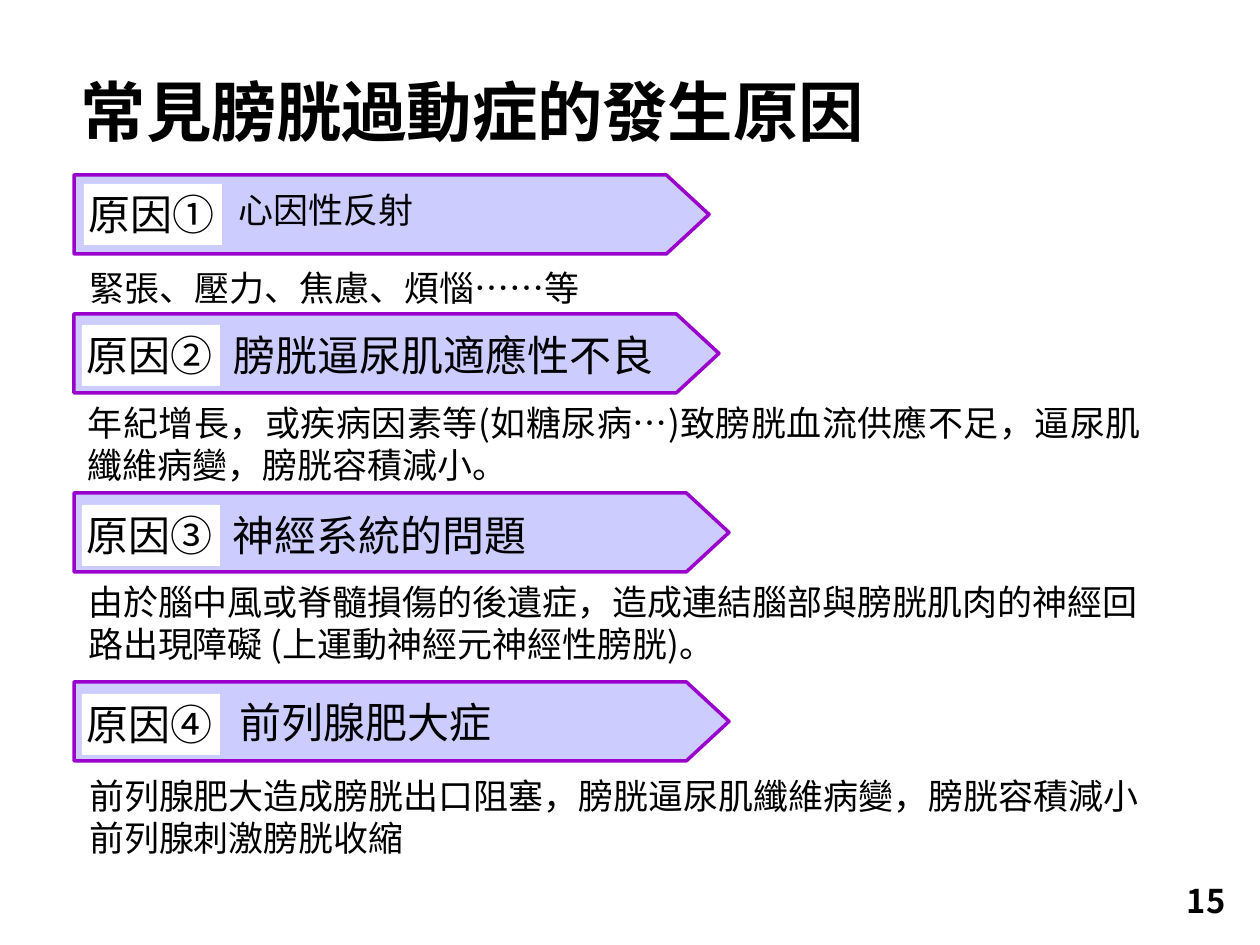
from lxml.etree import SubElement
from pptx import Presentation
from pptx.dml.color import RGBColor
from pptx.enum.shapes import MSO_SHAPE as Shape
from pptx.enum.text import MSO_ANCHOR as Anchor, MSO_AUTO_SIZE as AutoSize, PP_ALIGN as Align
from pptx.oxml.ns import qn
from pptx.util import Emu, Pt

PX = 914400 / 168
COLORS = {"text": "000000", "banner": "CCCCFF", "border": "9900CC", "label": "FFFFFF"}


def px(length):
    return Emu(round(length * PX))


def color(name):
    return RGBColor.from_string(COLORS[name])


class Deck:
    font = "Noto Sans CJK SC"
    inset = 5

    def __init__(self, width, height):
        self.prs = Presentation()
        self.prs.slide_width, self.prs.slide_height = px(width), px(height)
        self.slide = self.prs.slides.add_slide(self.prs.slide_layouts[5])

    def set_text(self, frame, lines, size, bold=False, align=Align.LEFT):
        frame.text = "\n".join(lines)
        for paragraph in frame.paragraphs:
            paragraph.alignment = align
            font = paragraph.font
            font.name, font.size, font.bold = self.font, Pt(size), bold
            font.color.rgb = color("text")
            properties = paragraph._p.pPr.find(qn("a:defRPr"))
            SubElement(properties, qn("a:ea")).set("typeface", self.font)

    def fit(self, frame, wrap):
        frame.margin_left = frame.margin_right = px(self.inset)
        frame.margin_top = frame.margin_bottom = px(self.inset)
        frame.vertical_anchor = Anchor.TOP
        frame.word_wrap = wrap
        frame.auto_size = AutoSize.SHAPE_TO_FIT_TEXT

    def title(self, box, text):
        title = self.slide.shapes.title
        title.left, title.top, title.width, title.height = map(px, box)
        frame = title.text_frame
        frame.vertical_anchor = Anchor.MIDDLE
        frame.auto_size = AutoSize.NONE
        self.set_text(frame, [text], 28, bold=True)

    def shape(self, kind, box, fill):
        shape = self.slide.shapes.add_shape(kind, *map(px, box))
        shape.shadow.inherit = False
        shape.fill.solid()
        shape.fill.fore_color.rgb = color(fill)
        return shape

    def banner(self, box):
        banner = self.shape(Shape.PENTAGON, box, "banner")
        banner.adjustments[0] = 0.54
        banner.line.color.rgb = color("border")
        banner.line.width = Pt(1.5)

    def label(self, box, text):
        label = self.shape(Shape.RECTANGLE, box, "label")
        label.line.fill.background()
        self.fit(label.text_frame, wrap=False)
        self.set_text(label.text_frame, [text], 18)

    def text(self, box, lines, size, wrap=False, align=Align.LEFT):
        frame = self.slide.shapes.add_textbox(*map(px, box)).text_frame
        self.fit(frame, wrap)
        self.set_text(frame, lines, size, align=align)

    def page_number(self, box, number):
        frame = self.slide.shapes.add_textbox(*map(px, box)).text_frame
        frame.word_wrap = True
        frame.vertical_anchor = Anchor.MIDDLE
        self.set_text(frame, [number], 14, bold=True, align=Align.RIGHT)


CAUSES = [
    {"banner": (175, 635), "label": (84, 184), "name": "原因①",
     "heading": ((234, 184, 186, 52), "心因性反射", 15),
     "detail": ((85, 262, 1140, 52), ["緊張、壓力、焦慮、煩惱……等"], Align.JUSTIFY)},
    {"banner": (314, 645), "label": (82, 325), "name": "原因②",
     "heading": ((228, 325, 433, 61), "膀胱逼尿肌適應性不良", 18),
     "detail": ((83, 397, 1063, 94),
                ["年紀增長，或疾病因素等(如糖尿病…)致膀胱血流供應不足，逼尿肌纖維病變，膀胱容積減小。"],
                Align.JUSTIFY)},
    {"banner": (493, 655), "label": (82, 505), "name": "原因③",
     "heading": ((228, 505, 307, 61), "神經系統的問題", 18),
     "detail": ((83, 576, 1073, 94),
                ["由於腦中風或脊髓損傷的後遺症，造成連結腦部與膀胱肌肉的神經回路出現障礙 (上運動神經元神經性膀胱)。"],
                Align.LEFT)},
    {"banner": (682, 655), "label": (82, 694), "name": "原因④",
     "heading": ((234, 692, 264, 61), "前列腺肥大症", 18),
     "detail": ((84, 770, 1073, 94),
                ["前列腺肥大造成膀胱出口阻塞，膀胱逼尿肌纖維病變，膀胱容積減小", "前列腺刺激膀胱收縮"],
                Align.JUSTIFY)},
]


def main():
    deck = Deck(1260, 945)
    deck.title((64, 39, 1134, 143), "常見膀胱過動症的發生原因")
    for cause in CAUSES:
        top, width = cause["banner"]
        deck.banner((74, top, width, 79))
        deck.label((*cause["label"], 138, 61), cause["name"])
        box, heading, size = cause["heading"]
        deck.text(box, [heading], size)
        box, lines, align = cause["detail"]
        deck.text(box, lines, 15, wrap=True, align=align)
    deck.page_number((948, 876, 294, 50), "15")
    deck.prs.save("out.pptx")


if __name__ == "__main__":
    main()
